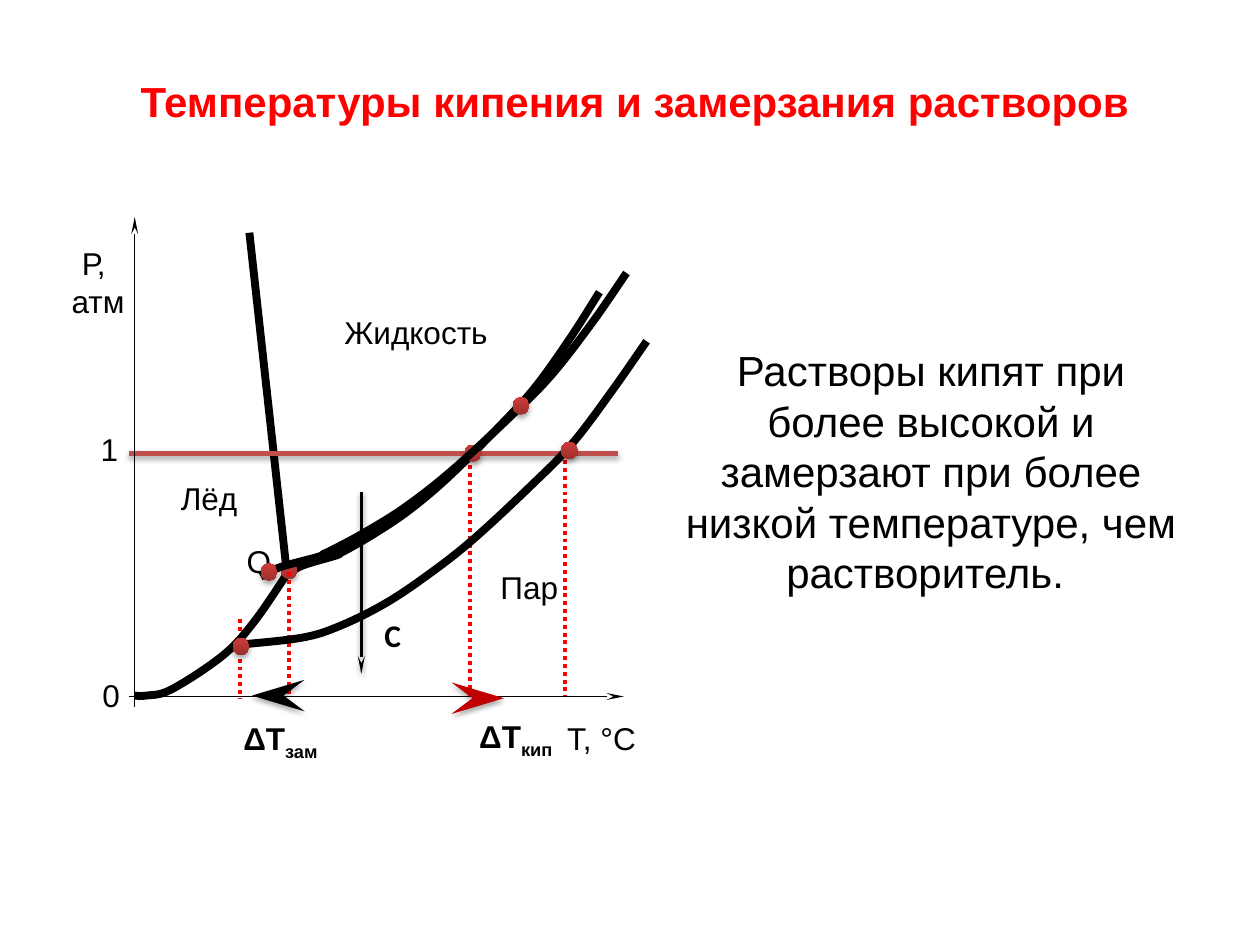
from dataclasses import dataclass

from lxml import etree
from pptx import Presentation, util as u
from pptx.dml.color import RGBColor
from pptx.enum import dml, shapes, text
from pptx.oxml import ns

LIQUID_VAPOUR = [(164, 328), (173.5, 323), (192, 317.5), (194.5, 316), (198.5, 314), (214, 305),
                 (234, 291.5), (257, 272), (286.5, 242.5), (306, 221), (326, 193), (342.5, 167)]
SOLUTION = [(135.5, 368.5), (172, 364.5), (193.5, 358), (219, 345.5), (242.5, 330), (269.5, 309),
            (304, 277), (327, 253.5), (350, 223), (369.5, 195)]
ICE_VAPOUR = [(77, 397.5), (83.5, 397.5), (98, 394), (127.5, 374.5), (145.5, 355), (164, 328)]


@dataclass
class Theme:
    """Colours and type sizes of the slide."""
    ink: str = "000000"
    accent: str = "FF0000"
    pressure: str = "C0504D"
    boiling: str = "C00000"
    dot_dark: str = "9C2F2D"
    dot_light: str = "CE3B37"
    font: str = "Arial"
    alt_font: str = "Calibri"
    heading: int = 24
    label: int = 18
    curve: float = 4.5
    guide: float = 2.25


def rgb(value):
    """Return a colour from its hex name."""
    return RGBColor.from_string(value)


def stretch(points, left, top, width, height):
    """Fit a list of points into a box."""
    xs, ys = zip(*points)
    kx, ky = width / (max(xs) - min(xs)), height / (max(ys) - min(ys))
    return [(left + (x - min(xs)) * kx, top + (y - min(ys)) * ky) for x, y in points]


def bezier_segments(points):
    """Yield two control points and an end for each smooth segment."""
    ends = [points[0], *points, points[-1]]
    for a, b, c, d in zip(ends, ends[1:], ends[2:], ends[3:]):
        yield (tuple(q + (r - p) / 6 for p, q, r in zip(a, b, c)),
               tuple(r - (s - q) / 6 for q, r, s in zip(b, c, d)), c)


class Sketch:
    """Draws styled elements on the current slide."""

    def __init__(self, slide, theme):
        """Keep the slide and its theme."""
        self.s, self.t = slide, theme

    def effect(self, sp, shadow=False):
        """Set a soft shadow, or none."""
        effects = etree.SubElement(sp._element.spPr, ns.qn("a:effectLst"))
        if shadow:
            outer = etree.SubElement(effects, ns.qn("a:outerShdw"), blurRad="39370",
                                     dist="22860", dir="5400000", rotWithShape="0")
            black = etree.SubElement(outer, ns.qn("a:srgbClr"), val=self.t.ink)
            etree.SubElement(black, ns.qn("a:alpha"), val="35000")

    def style(self, p, size, color=None, bold=False, font=None, align=text.PP_ALIGN.CENTER):
        """Format a paragraph and its runs."""
        p.alignment = align
        for r in p.runs:
            r.font.size, r.font.bold = u.Pt(size), bold
            r.font.name = font or self.t.font
            r.font.color.rgb = rgb(color or self.t.ink)

    def holder(self, sp, box, words, **look):
        """Place and fill a template placeholder."""
        sp.left, sp.top, sp.width, sp.height = map(u.Pt, box)
        tf = sp.text_frame
        tf.text, tf.word_wrap = words, True
        tf.auto_size = text.MSO_AUTO_SIZE.SHAPE_TO_FIT_TEXT
        tf.vertical_anchor = text.MSO_ANCHOR.TOP
        p = tf.paragraphs[0]
        p.space_before = u.Pt(0)
        self.style(p, self.t.heading, **look)
        return p

    def title(self, box, words):
        """Fill the title."""
        self.holder(self.s.shapes.title, box, words, color=self.t.accent, bold=True)

    def body(self, box, words):
        """Fill the body without a bullet."""
        p = self.holder(self.s.placeholders[1], box, words)
        props = p._p.get_or_add_pPr()
        props.set("marL", "0")
        props.set("indent", "0")
        etree.SubElement(props, ns.qn("a:buNone"))

    def label(self, box, words, sub="", **look):
        """Add a label with an optional subscript."""
        tf = self.s.shapes.add_textbox(*map(u.Pt, box)).text_frame
        tf.text, tf.word_wrap = words, True
        p = tf.paragraphs[0]
        if sub:
            r = p.add_run()
            r.text = sub
            r.font._element.set("baseline", "-25000")
        self.style(p, self.t.label, **look)

    def line(self, start, end, color, width, dotted=False, arrow="", shadow=False):
        """Add a straight line, or an arrow whose head width is named."""
        sp = self.s.shapes.add_connector(shapes.MSO_CONNECTOR.STRAIGHT, *map(u.Pt, start + end))
        sp.line.color.rgb, sp.line.width = rgb(color), u.Pt(width)
        if dotted:
            sp.line.dash_style = dml.MSO_LINE.ROUND_DOT
        if arrow:
            etree.SubElement(sp.line._get_or_add_ln(), ns.qn("a:tailEnd"),
                             type="stealth", w=arrow, len="lg")
        self.effect(sp, shadow)

    def guide(self, x, top, bottom):
        """Add a dotted vertical guide."""
        self.line((x, top), (x, bottom), self.t.accent, self.t.guide, dotted=True)

    def curve(self, points):
        """Add a smooth open curve."""
        points = [(u.Pt(x), u.Pt(y)) for x, y in points]
        builder = self.s.shapes.build_freeform(*points[0])
        builder.add_line_segments(points[1:], close=False)
        sp = builder.convert_to_shape()
        straight = list(sp._element.iter(ns.qn("a:lnTo")))
        for old, segment in zip(straight, bezier_segments(points)):
            bend = etree.Element(ns.qn("a:cubicBezTo"))
            for x, y in segment:
                etree.SubElement(bend, ns.qn("a:pt"), x=str(round(x - sp.left)),
                                 y=str(round(y - sp.top)))
            old.getparent().replace(old, bend)
        sp.fill.background()
        sp.line.color.rgb, sp.line.width = rgb(self.t.ink), u.Pt(self.t.curve)
        self.effect(sp)

    def dot(self, left, top):
        """Add a shaded point marker."""
        sp = self.s.shapes.add_shape(shapes.MSO_SHAPE.OVAL, *map(u.Pt, (left, top, 9.5, 10)))
        sp.fill.gradient()
        sp.fill.gradient_angle = 90
        for stop, color in zip(sp.fill.gradient_stops, (self.t.dot_dark, self.t.dot_light)):
            stop.color.rgb = rgb(color)
        sp.line.fill.background()
        self.effect(sp, shadow=True)


def main():
    """Build the phase diagram slide."""
    prs = Presentation()
    prs.slide_width, prs.slide_height = u.Pt(720), u.Pt(540)
    t = Theme()
    d = Sketch(prs.slides.add_slide(prs.slide_layouts[1]), t)
    d.title((56, 39.5, 613.5, 36), "Температуры кипения и замерзания растворов")
    d.body((377, 193.5, 310, 152.5), "Растворы кипят при более высокой и замерзают при более "
                                     "низкой температуре, чем растворитель. ")
    d.guide(137, 354, 399.5)
    d.guide(323, 258.5, 397.5)
    d.curve(LIQUID_VAPOUR)
    d.line((164, 328), (142.5, 133), t.ink, t.curve)
    d.curve(ICE_VAPOUR)
    d.line((73.5, 259), (353, 259), t.pressure, 3, shadow=True)
    d.guide(268.5, 398, 259)
    d.line((73.5, 398), (356.5, 398), t.ink, 0.75, arrow="sm")
    d.line((77, 404), (77, 124), t.ink, 0.75, arrow="sm")
    for box, words in (
            ((39.5, 242, 46, 40), "1"),
            ((22.5, 136, 62, 50.5), "Р,\v атм"),
            ((75, 270, 89, 47.5), "Лёд"),
            ((160, 175.5, 155.5, 71.5), "Жидкость"),
            ((106.5, 306, 83, 48), "О"),
            ((311, 407.5, 65.5, 34.5), "Т, °С"),
            ((35.5, 383, 56, 39), "0"),
            ((268, 321, 69, 34), "Пар")):
        d.label(box, words)
    d.dot(160.5, 321)
    d.dot(265.5, 254)
    d.guide(165, 327, 397.5)
    d.line((206.5, 281), (206.5, 385), t.ink, 2, arrow="sm", shadow=True)
    d.label((212.5, 348.5, 28, 29), "С", bold=True, font=t.alt_font, align=text.PP_ALIGN.LEFT)
    d.line((163.5, 397.5), (144, 397.5), t.ink, 6, arrow="med", shadow=True)
    d.line((269, 399), (288, 399), t.boiling, 6, arrow="med", shadow=True)
    d.curve(stretch(LIQUID_VAPOUR, 149, 156, 209, 173.5))
    d.dot(293, 227)
    d.dot(149, 322)
    d.curve(SOLUTION)
    d.dot(320.5, 252.5)
    d.dot(133, 364.5)
    d.label((258, 406, 73.5, 36.5), "ΔТ", "кип", bold=True)
    d.label((121, 407.5, 78.5, 36.5), "ΔТ", "зам", bold=True)
    prs.save("out.pptx")


if __name__ == "__main__":
    main()
